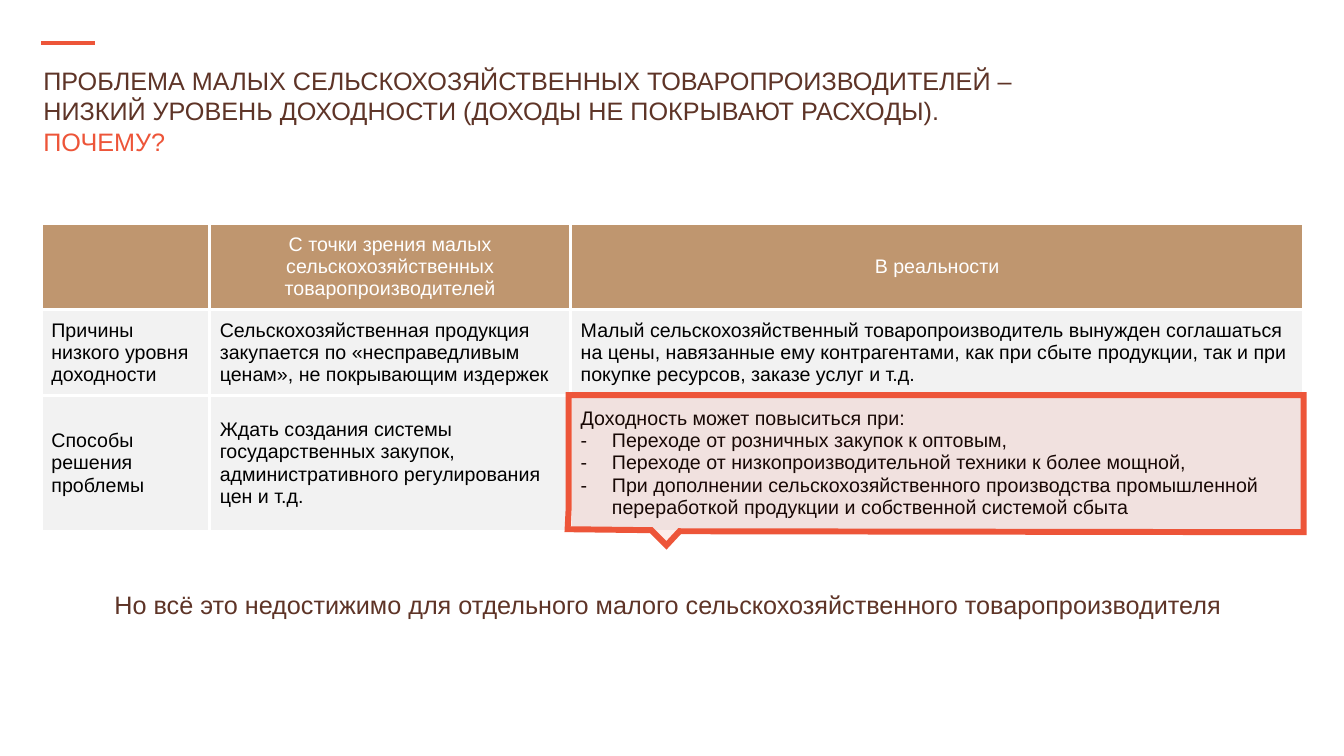
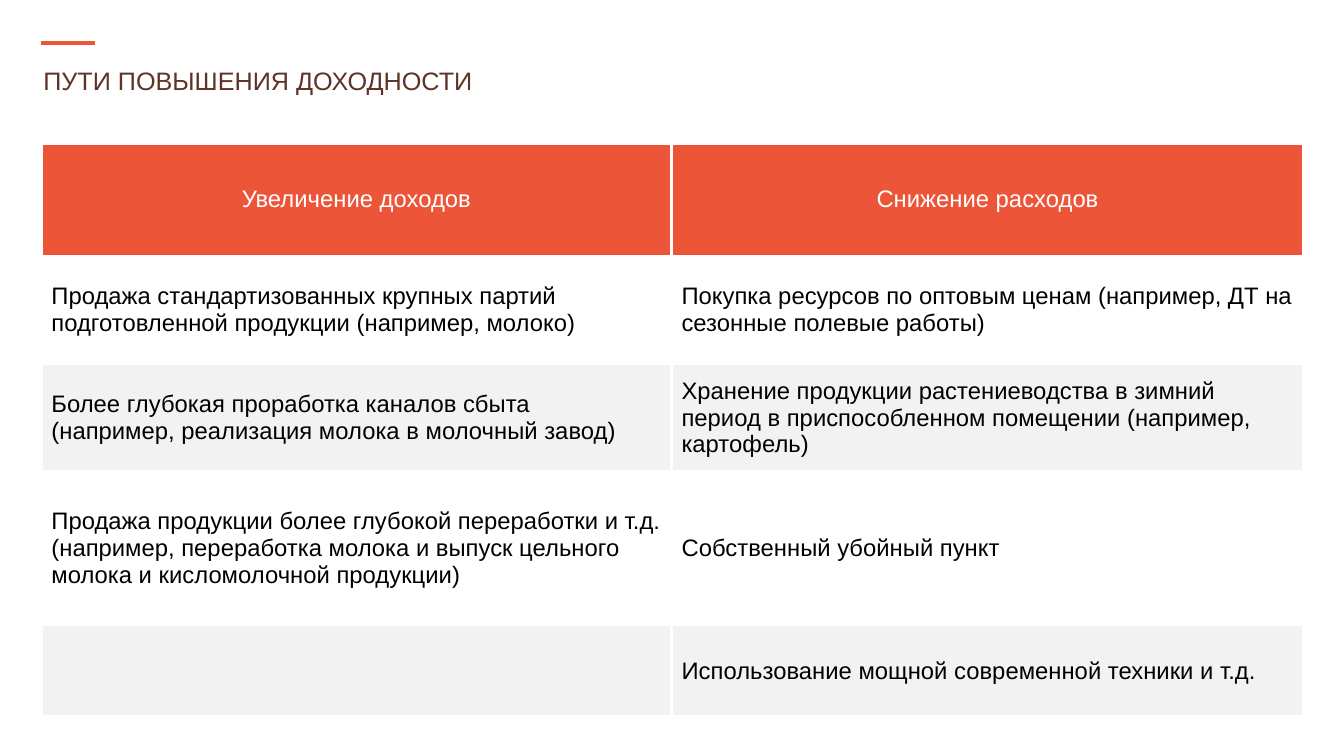
from lxml import etree
from pptx import Presentation
from pptx.dml.color import RGBColor
from pptx.enum.shapes import MSO_CONNECTOR as Connector
from pptx.enum.text import MSO_ANCHOR as Anchor, MSO_AUTO_SIZE as AutoSize, PP_ALIGN as Align
from pptx.oxml.ns import qn
from pptx.util import Inches, Pt

COLORS = {
    "accent": "ED5539",
    "brown": "5E3427",
    "tan": "BF966F",
    "gray": "F2F2F2",
    "white": "FFFFFF",
    "black": "000000",
}
FONT = "Arial"
LEFT = 0.41
BULLET = "- "


def rgb(name):
    return RGBColor.from_string(COLORS[name])


class Deck:
    def __init__(self):
        self.prs = Presentation()
        self.prs.slide_width, self.prs.slide_height = Inches(13.33), Inches(7.5)
        self.slide = None

    def style(self, paragraph, size, color, align=Align.LEFT):
        paragraph.alignment = align
        font = paragraph.font
        font.name, font.size, font.bold = FONT, Pt(size), False
        font.color.rgb = rgb(color)

    def add_slide(self, title, question=None):
        """Start a slide with the accent dash and the title."""
        self.slide = self.prs.slides.add_slide(self.prs.slide_layouts[5])
        dash = self.slide.shapes.add_connector(
            Connector.STRAIGHT, Inches(LEFT), Inches(0.43), Inches(0.94), Inches(0.43))
        dash.line.color.rgb = rgb("accent")
        dash.line.width = Pt(3)
        etree.SubElement(dash._element.spPr, qn("a:effectLst"))

        heading = self.slide.shapes.title
        heading.left, heading.top = Inches(0.33), Inches(0.6)
        heading.width, heading.height = Inches(10.06), Inches(0.32)
        frame = heading.text_frame
        frame.word_wrap = True
        frame.auto_size = AutoSize.NONE
        frame.vertical_anchor = Anchor.TOP
        paragraph = frame.paragraphs[0]
        paragraph.add_run().text = title
        self.style(paragraph, 18, "brown")
        if question:
            run = paragraph.add_run()
            run.text = question
            run.font.color.rgb = rgb("accent")

    def border(self, cell):
        props = cell._tc.get_or_add_tcPr()
        for side in ("a:lnL", "a:lnR", "a:lnT", "a:lnB"):
            line = etree.SubElement(props, qn(side), w=str(Pt(2.25)))
            fill = etree.SubElement(line, qn("a:solidFill"))
            etree.SubElement(fill, qn("a:srgbClr"), val=COLORS["white"])

    def fill_cell(self, cell, text, size, color, fill, align):
        self.border(cell)
        cell.fill.solid()
        cell.fill.fore_color.rgb = rgb(fill)
        cell.vertical_anchor = Anchor.MIDDLE
        lines = text.split("\n")
        cell.text = "\n".join(line.removeprefix(BULLET) for line in lines)
        for line, paragraph in zip(lines, cell.text_frame.paragraphs):
            if line.startswith(BULLET):
                props = paragraph._p.get_or_add_pPr()
                props.set("marL", str(Inches(0.31)))
                props.set("indent", str(-Inches(0.31)))
                etree.SubElement(props, qn("a:buFont"), typeface=FONT)
                etree.SubElement(props, qn("a:buChar"), char="-")
            self.style(paragraph, size, color, align)

    def table(self, top, widths, heights, rows, size, header_fill, body_fills):
        """Add a table; body_fills alternate down the rows under the header."""
        table = self.slide.shapes.add_table(
            len(rows), len(widths), Inches(LEFT), Inches(top),
            Inches(sum(widths)), Inches(sum(heights))).table
        table.first_row = table.horz_banding = False
        for column, width in zip(table.columns, widths):
            column.width = Inches(width)
        for r, (texts, height) in enumerate(zip(rows, heights)):
            table.rows[r].height = Inches(height)
            if r == 0:
                look = ("white", header_fill, Align.CENTER)
            else:
                look = ("black", body_fills[(r - 1) % len(body_fills)], Align.LEFT)
            for c, text in enumerate(texts):
                self.fill_cell(table.cell(r, c), text, size, *look)

    def callout(self, points):
        """Outline an area with a translucent accent frame."""
        start, *corners = [(Inches(x), Inches(y)) for x, y in points]
        builder = self.slide.shapes.build_freeform(*start)
        builder.add_line_segments(corners, close=True)
        frame = builder.convert_to_shape()
        frame.shadow.inherit = False
        frame.fill.solid()
        frame.fill.fore_color.rgb = rgb("accent")
        tint = frame._element.spPr.find(qn("a:solidFill"))[0]
        etree.SubElement(tint, qn("a:alpha"), val="10000")
        frame.line.color.rgb = rgb("accent")
        frame.line.width = Pt(4.25)
        etree.SubElement(frame.line._get_or_add_ln(), qn("a:miter"), lim="800000")

    def conclusion(self, text):
        box = self.slide.shapes.add_textbox(
            Inches(0.69), Inches(5.8), Inches(11.87), Inches(0.4))
        box.text_frame.word_wrap = True
        box.text_frame.text = text
        self.style(box.text_frame.paragraphs[0], 18, "brown", Align.CENTER)


def problem_slide(deck):
    deck.add_slide(
        "ПРОБЛЕМА МАЛЫХ СЕЛЬСКОХОЗЯЙСТВЕННЫХ ТОВАРОПРОИЗВОДИТЕЛЕЙ – "
        "НИЗКИЙ УРОВЕНЬ ДОХОДНОСТИ (ДОХОДЫ НЕ ПОКРЫВАЮТ РАСХОДЫ). ",
        "ПОЧЕМУ?")
    rows = [
        ("", "С точки зрения малых сельскохозяйственных товаропроизводителей",
         "В реальности"),
        ("Причины низкого уровня доходности",
         "Сельскохозяйственная продукция закупается по «несправедливым ценам», "
         "не покрывающим издержек",
         "Малый сельскохозяйственный товаропроизводитель вынужден соглашаться на цены, "
         "навязанные ему контрагентами, как при сбыте продукции, так и при покупке "
         "ресурсов, заказе услуг и т.д."),
        ("Способы решения проблемы",
         "Ждать создания системы государственных закупок, административного "
         "регулирования цен и т.д.",
         "Доходность может повыситься при:\n"
         "- Переходе от розничных закупок к оптовым,\n"
         "- Переходе от низкопроизводительной техники к более мощной,\n"
         "- При дополнении сельскохозяйственного производства промышленной "
         "переработкой продукции и собственной системой сбыта"),
    ]
    deck.table(2.22, (1.67, 3.58, 7.27), (0.85, 0.85, 1.35), rows, 14, "tan", ["gray"])
    # Frame around the last cell, with a pointer to the conclusion
    deck.callout([(5.64, 3.92), (12.93, 3.92), (12.93, 5.28), (6.74, 5.27),
                  (6.61, 5.41), (6.46, 5.26), (5.63, 5.25), (5.64, 5.05)])
    deck.conclusion("Но всё это недостижимо для отдельного малого "
                    "сельскохозяйственного товаропроизводителя")


def ways_slide(deck):
    deck.add_slide("ПУТИ ПОВЫШЕНИЯ ДОХОДНОСТИ")
    rows = [
        ("Увеличение доходов", "Снижение расходов"),
        ("Продажа стандартизованных крупных партий подготовленной продукции "
         "(например, молоко)",
         "Покупка ресурсов по оптовым ценам (например, ДТ на сезонные полевые работы)"),
        ("Более глубокая проработка каналов сбыта\n"
         "(например, реализация молока в молочный завод)",
         "Хранение продукции растениеводства в зимний период в приспособленном "
         "помещении (например, картофель)"),
        ("Продажа продукции более глубокой переработки и т.д.\n"
         "(например, переработка молока и выпуск цельного молока и "
         "кисломолочной продукции)",
         "Собственный убойный пункт"),
        ("", "Использование мощной современной техники и т.д."),
    ]
    deck.table(1.42, (6.25, 6.27), (1.12, 1.07, 1.07, 1.52, 0.91), rows, 17,
               "accent", ["white", "gray"])


def main():
    deck = Deck()
    problem_slide(deck)
    ways_slide(deck)
    deck.prs.save("out.pptx")


if __name__ == "__main__":
    main()
